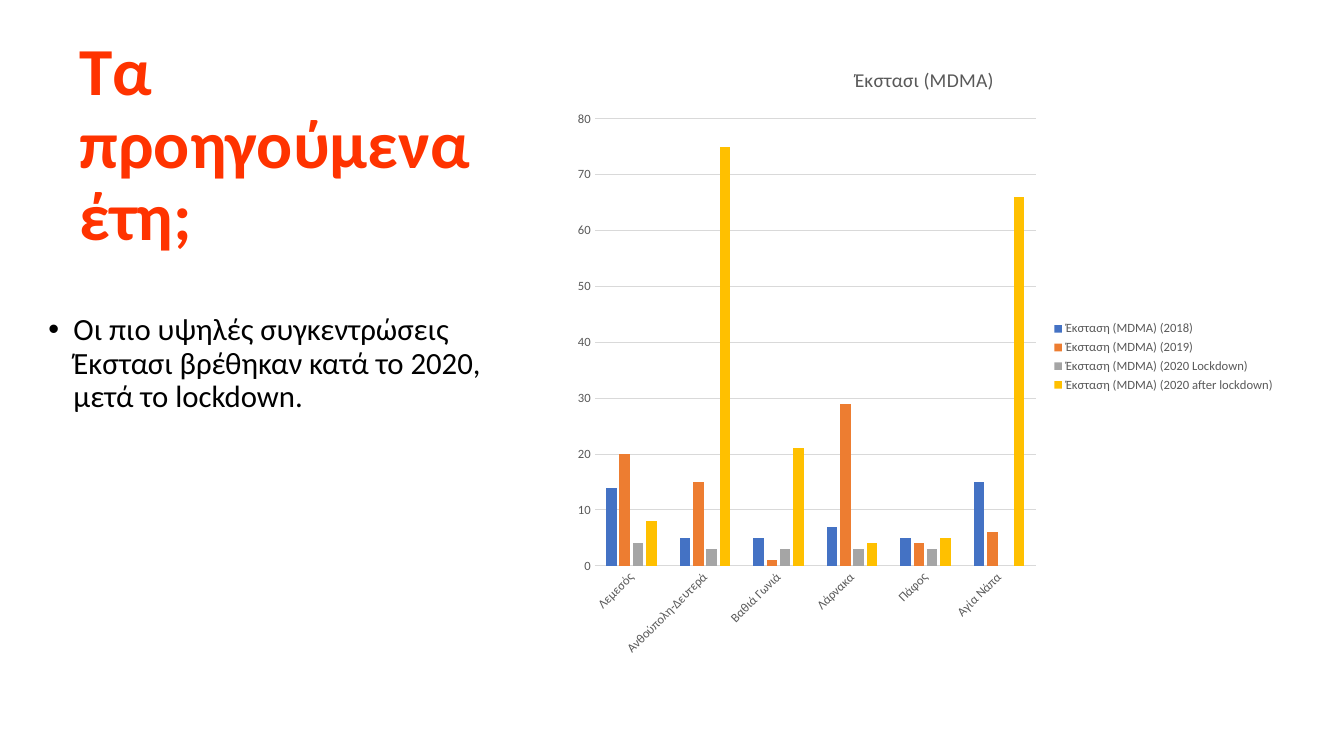
from lxml import etree
from pptx import Presentation
from pptx.chart.data import CategoryChartData
from pptx.dml.color import RGBColor
from pptx.enum.chart import XL_CHART_TYPE, XL_LEGEND_POSITION, XL_TICK_MARK
from pptx.enum.text import MSO_ANCHOR
from pptx.oxml.ns import qn
from pptx.util import Pt

COLUMNS = XL_CHART_TYPE.COLUMN_CLUSTERED
LEGEND_RIGHT = XL_LEGEND_POSITION.RIGHT
NO_TICK = XL_TICK_MARK.NONE
TOP, BOTTOM = MSO_ANCHOR.TOP, MSO_ANCHOR.BOTTOM

RED = RGBColor(0xFF, 0x33, 0x00)
BLACK = RGBColor(0x00, 0x00, 0x00)
GREY_TEXT = RGBColor(0x59, 0x59, 0x59)
GREY_LINE = RGBColor(0xD9, 0xD9, 0xD9)
BLUE = RGBColor(0x44, 0x72, 0xC4)
ORANGE = RGBColor(0xED, 0x7D, 0x31)
GREY = RGBColor(0xA5, 0xA5, 0xA5)
YELLOW = RGBColor(0xFF, 0xC0, 0x00)

AREAS = ["Λεμεσός", "Ανθούπολη-Δευτερά", "Βαθιά Γωνιά",
         "Λάρνακα", "Πάφος", "Αγία Νάπα"]
PERIODS = [
    ("Έκσταση (MDMA) (2018)", [14, 5, 5, 7, 5, 15], BLUE),
    ("Έκσταση (MDMA) (2019)", [20, 15, 1, 29, 4, 6], ORANGE),
    ("Έκσταση (MDMA) (2020 Lockdown)", [4, 3, 3, 3, 3, None], GREY),
    ("Έκσταση (MDMA) (2020 after lockdown)", [8, 75, 21, 4, 5, 66], YELLOW),
]


class SlideBuilder:
    font_name = "Calibri"
    line_spacing = 0.9

    def __init__(self, slide):
        self.slide = slide

    def style_font(self, font, size, color, bold=False):
        font.name = self.font_name
        font.size = Pt(size)
        font.bold = bold
        font.color.rgb = color

    def text(self, box, text, size, color, bold=False, anchor=TOP):
        shape = self.slide.shapes.add_textbox(*map(Pt, box))
        frame = shape.text_frame
        frame.word_wrap = True
        frame.vertical_anchor = anchor
        frame.text = text
        paragraph = frame.paragraphs[0]
        paragraph.line_spacing = self.line_spacing
        self.style_font(paragraph.runs[0].font, size, color, bold)
        return paragraph

    def bullet(self, box, text, size, color):
        paragraph = self.text(box, text, size, color)
        paragraph.space_before = Pt(10)
        properties = paragraph._p.get_or_add_pPr()
        properties.set("marL", str(Pt(36)))
        properties.set("indent", str(-Pt(18)))
        etree.SubElement(properties, qn("a:buFont"), typeface="Arial")
        etree.SubElement(properties, qn("a:buChar"), char="•")

    def style_axis(self, axis):
        axis.major_tick_mark = axis.minor_tick_mark = NO_TICK
        self.style_font(axis.tick_labels.font, 9, GREY_TEXT)

    def style_line(self, line):
        line.color.rgb = GREY_LINE
        line.width = Pt(0.75)

    def column_chart(self, box, title, categories, series_rows):
        data = CategoryChartData()
        data.categories = categories
        for name, values, _ in series_rows:
            data.add_series(name, values)
        chart = self.slide.shapes.add_chart(COLUMNS, *map(Pt, box), data).chart
        self.style_font(chart.font, 10, BLACK)

        # Title and legend
        chart.has_title = True
        chart.chart_title.include_in_layout = False
        frame = chart.chart_title.text_frame
        frame.text = title
        self.style_font(frame.paragraphs[0].runs[0].font, 14, GREY_TEXT)
        chart.has_legend = True
        chart.legend.position = LEGEND_RIGHT
        chart.legend.include_in_layout = False
        self.style_font(chart.legend.font, 9, GREY_TEXT)

        # Axes
        category_axis, value_axis = chart.category_axis, chart.value_axis
        self.style_axis(category_axis)
        self.style_line(category_axis.format.line)
        labels = category_axis._element.find(qn("c:txPr"))
        labels.find(qn("a:bodyPr")).set("rot", str(-45 * 60000))
        self.style_axis(value_axis)
        value_axis.format.line.fill.background()
        value_axis.minimum_scale, value_axis.maximum_scale = 0, 80
        value_axis.major_unit = 10
        self.style_line(value_axis.major_gridlines.format.line)

        # Columns
        plot = chart.plots[0]
        plot.vary_by_categories = False
        plot.gap_width, plot.overlap = 219, -27
        for series, (_, _, color) in zip(plot.series, series_rows):
            series.format.fill.solid()
            series.format.fill.fore_color.rgb = color


def main():
    presentation = Presentation()
    presentation.slide_width, presentation.slide_height = Pt(960), Pt(540)
    slide = presentation.slides.add_slide(presentation.slide_layouts[6])
    builder = SlideBuilder(slide)

    # Heading and finding on the left
    builder.text((49.7, 50.4, 313.2, 135.4), "Τα προηγούμενα έτη;",
                 48, RED, bold=True, anchor=BOTTOM)
    builder.bullet((9.4, 221, 342.7, 290.2),
                   "Οι πιο υψηλές συγκεντρώσεις Έκστασι βρέθηκαν "
                   "κατά το 2020, μετά το lockdown.", 22, BLACK)

    # Concentrations by area on the right
    builder.column_chart((402.5, 32.4, 515.5, 445), "Έκστασι (MDMA)",
                         AREAS, PERIODS)
    presentation.save("out.pptx")


if __name__ == "__main__":
    main()
